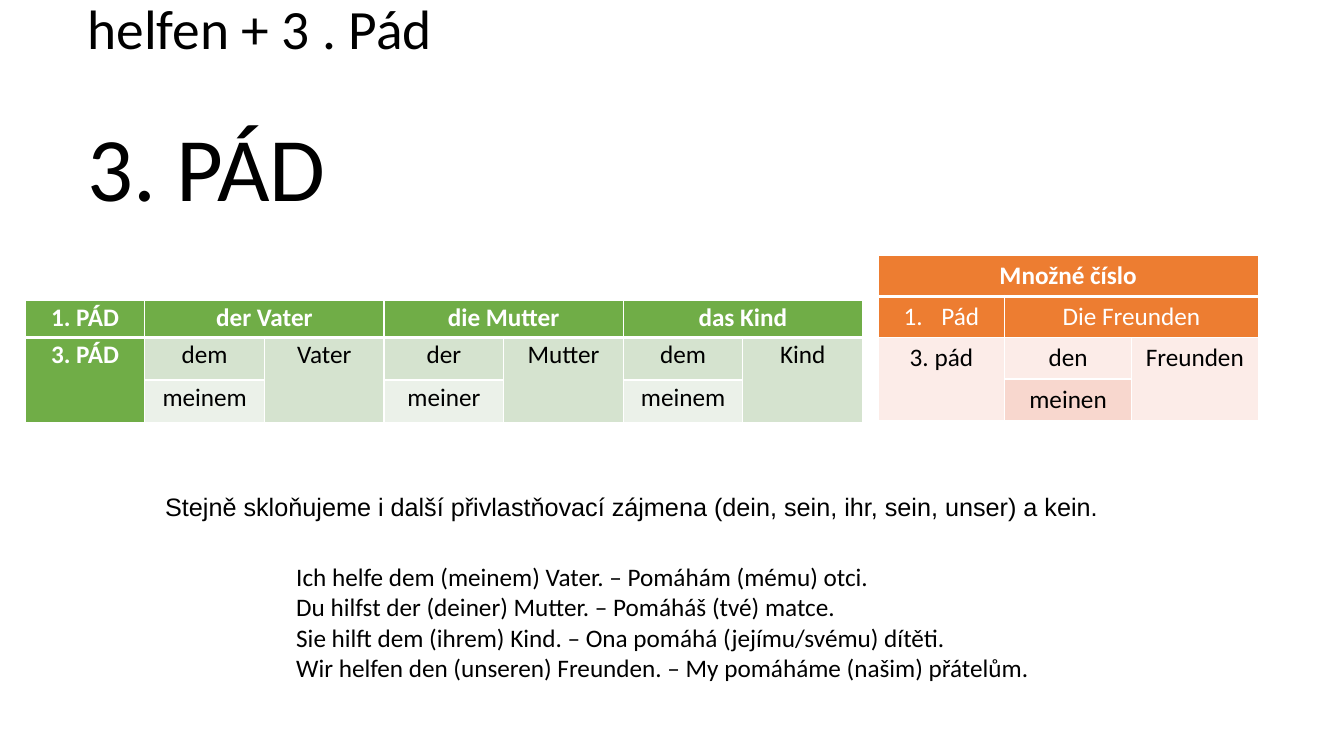
from lxml import etree
from pptx import Presentation
from pptx import util as u
from pptx.dml.color import RGBColor
from pptx.enum import text
from pptx.oxml.ns import qn

BLACK = RGBColor(0, 0, 0)
WHITE = RGBColor(0xFF, 0xFF, 0xFF)
GREEN = RGBColor(0x70, 0xAD, 0x47)
GREEN_MID = RGBColor(0xD5, 0xE3, 0xCF)
GREEN_PALE = RGBColor(0xEB, 0xF1, 0xE9)
ORANGE = RGBColor(0xED, 0x7D, 0x31)
ORANGE_PALE = RGBColor(0xFC, 0xEC, 0xE8)
ORANGE_MID = RGBColor(0xF8, 0xD7, 0xCE)

prs = Presentation()
prs.slide_width, prs.slide_height = u.Inches(13.33), u.Inches(7.5)
s = prs.slides.add_slide(prs.slide_layouts[6])
COL, ROW = prs.slide_width / 100, prs.slide_height / 100


def add_text(x, y, w, h, lines, font, anchor=text.MSO_ANCHOR.TOP):
    sp = s.shapes.add_textbox(int(x * COL), int(y * ROW), int(w * COL), int(h * ROW))
    tf = sp.text_frame
    tf.word_wrap = True
    tf.vertical_anchor = anchor
    for i, (line, size) in enumerate(lines):
        p = tf.paragraphs[0] if i == 0 else tf.add_paragraph()
        p.text = line
        p.font.name, p.font.size, p.font.color.rgb = font, u.Pt(size), BLACK
    return tf


def set_borders(cell, r):
    tc_pr = cell._tc.get_or_add_tcPr()
    widths = {"L": 1, "R": 1, "T": 3 if r == 1 else 1, "B": 3 if r == 0 else 1}
    for side, width in widths.items():
        ln = etree.SubElement(tc_pr, qn("a:ln" + side), w=str(u.Pt(width)))
        fill = etree.SubElement(ln, qn("a:solidFill"))
        etree.SubElement(fill, qn("a:srgbClr"), val=str(WHITE))


tf = add_text(5.78, 5.07, 86.25, 19.33, [("helfen + 3 . Pád", 39.6), ("3. PÁD", 64.8)],
              "Calibri", text.MSO_ANCHOR.MIDDLE)
for p in tf.paragraphs:
    p.line_spacing = 0.9
tf.paragraphs[1].space_before = u.Pt(43.5)

singular = {
    "at": (1.88, 39.73), "col": 8.9, "rows": [4.93, 5.6, 5.6],
    "cells": [["1. PÁD", "der Vater", "", "die Mutter", "", "das Kind", ""],
              ["3. PÁD", "dem", "Vater", "der", "Mutter", "dem", "Kind"],
              ["", "meinem", "", "meiner", "", "meinem", ""]],
    "spans": [(0, 1, 0, 2), (0, 3, 0, 4), (0, 5, 0, 6)] + [(1, c, 2, c) for c in (0, 2, 4, 6)],
    "head": GREEN, "fills": [GREEN, GREEN_MID, GREEN_PALE], "head_col": True, "tight": True,
}
plural = {
    "at": (65.33, 33.73), "col": 9.43, "rows": [5.47] * 4,
    "cells": [["Množné číslo", "", ""], ["Pád", "Die Freunden", ""],
              ["3. pád", "den", "Freunden"], ["", "meinen", ""]],
    "spans": [(0, 0, 0, 2), (1, 1, 1, 2), (2, 0, 3, 0), (2, 2, 3, 2)],
    "head": ORANGE, "fills": [ORANGE, ORANGE, ORANGE_PALE, ORANGE_MID],
    "head_col": False, "tight": False,
}

tables = []
for t in (singular, plural):
    n_rows, n_cols = len(t["cells"]), len(t["cells"][0])
    x, y = t["at"]
    tbl = s.shapes.add_table(n_rows, n_cols, int(x * COL), int(y * ROW),
                             int(n_cols * t["col"] * COL), int(sum(t["rows"]) * ROW)).table
    tables.append(tbl)
    for column in tbl.columns:
        column.width = int(t["col"] * COL)
    for r, height in enumerate(t["rows"]):
        tbl.rows[r].height = int(height * ROW)
        for c, word in enumerate(t["cells"][r]):
            cell = tbl.cell(r, c)
            set_borders(cell, r)
            fill = t["head"] if t["head_col"] and c == 0 else t["fills"][r]
            cell.fill.solid()
            cell.fill.fore_color.rgb = fill
            p = cell.text_frame.paragraphs[0]
            p.text = word
            p.alignment = text.PP_ALIGN.CENTER
            if t["tight"]:
                cell.margin_left = cell.margin_right = u.Inches(0.07)
                cell.margin_top = cell.margin_bottom = 0
                p.line_spacing, p.space_after = 1.07, u.Pt(8)
            p.font.name, p.font.size = "Calibri", u.Pt(18)
            p.font.color.rgb = WHITE if fill == t["head"] else BLACK
            p.font.bold = r == 0 or (t["head_col"] and c == 0)
    for r1, c1, r2, c2 in t["spans"]:
        tbl.cell(r1, c1).merge(tbl.cell(r2, c2))

p_pr = tables[1].cell(1, 0).text_frame.paragraphs[0]._p.get_or_add_pPr()
p_pr.set("marL", str(u.Pt(27)))
p_pr.set("indent", str(-u.Pt(27)))
p_pr.insert(0, etree.Element(qn("a:buAutoNum"), type="arabicPeriod"))

add_text(11.55, 64.27, 76.35, 5.4,
         [("Stejně skloňujeme i další přivlastňovací zájmena (dein, sein, ihr, sein, unser) a kein.", 18)],
         "Arial")
examples = ["Ich helfe dem (meinem) Vater. – Pomáhám (mému) otci.",
            "Du hilfst der (deiner) Mutter. – Pomáháš (tvé) matce.",
            "Sie hilft dem (ihrem) Kind. – Ona pomáhá (jejímu/svému) dítěti.",
            "Wir helfen den (unseren) Freunden. – My pomáháme (našim) přátelům."]
add_text(21.3, 73.6, 64.2, 17.47, [(line, 18) for line in examples], "Calibri")

prs.save("out.pptx")
